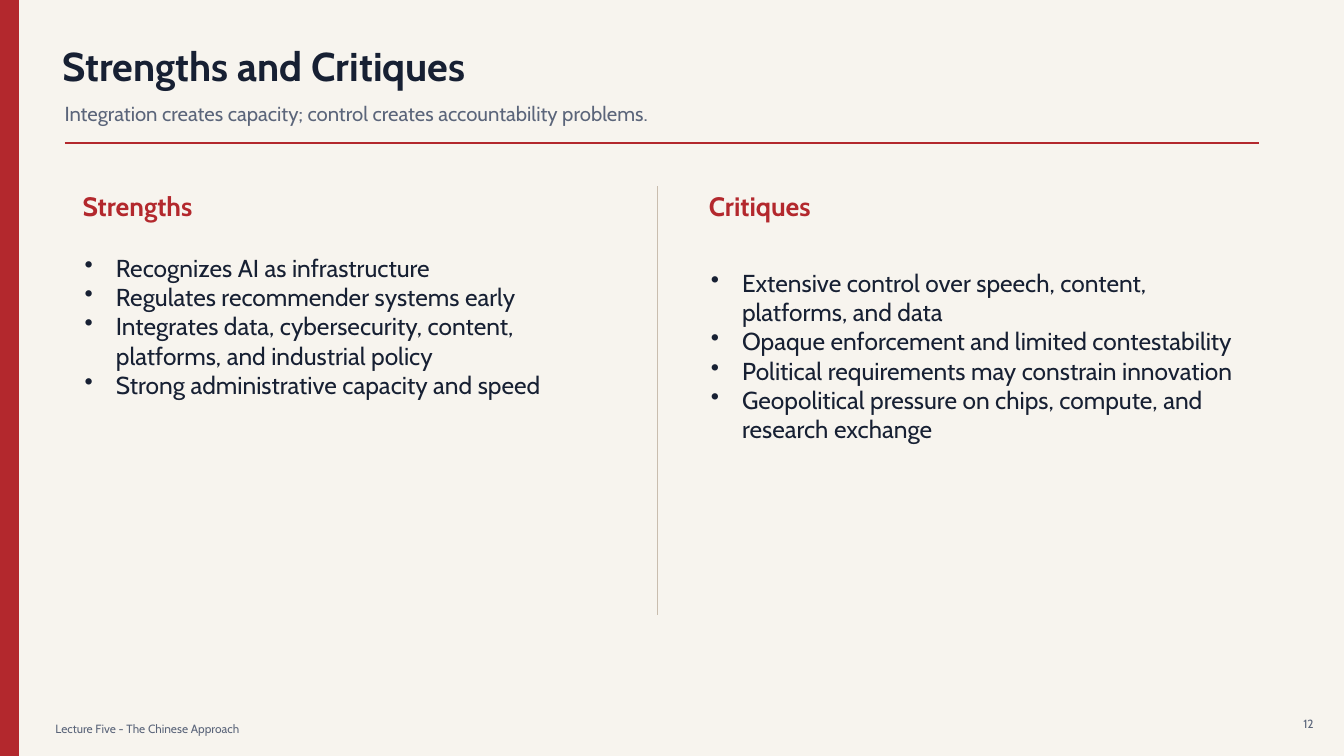
import pptx
import pptx.dml.color
import pptx.enum.shapes
import pptx.enum.text
import pptx.oxml
import pptx.oxml.ns
import pptx.util
from pptx.util import Inches

RED = pptx.dml.color.RGBColor(0xB3, 0x28, 0x2D)
NAVY = pptx.dml.color.RGBColor(0x17, 0x20, 0x33)
SLATE = pptx.dml.color.RGBColor(0x5B, 0x65, 0x7A)
SAND = pptx.dml.color.RGBColor(0xC9, 0xBD, 0xAE)
CREAM = pptx.dml.color.RGBColor(0xF7, 0xF4, 0xEE)
LEFT = pptx.enum.text.PP_ALIGN.LEFT
RIGHT = pptx.enum.text.PP_ALIGN.RIGHT

COLUMNS = [
    (0.82, "Strengths", 1.71, [
        "Recognizes AI as infrastructure",
        "Regulates recommender systems early",
        "Integrates data, cybersecurity, content, platforms, and industrial policy",
        "Strong administrative capacity and speed",
    ]),
    (7.03, "Critiques", 2.3, [
        "Extensive control over speech, content, platforms, and data",
        "Opaque enforcement and limited contestability",
        "Political requirements may constrain innovation",
        "Geopolitical pressure on chips, compute, and research exchange",
    ]),
]


class SlideBuilder:
    font_name = "Cabin"
    bullet_indent = Inches(0.31)

    def __init__(self, slide):
        self.slide = slide
        slide.background.fill.solid()
        slide.background.fill.fore_color.rgb = CREAM

    def bar(self, left, top, width, height, color):
        shape = self.slide.shapes.add_shape(
            pptx.enum.shapes.MSO_SHAPE.RECTANGLE,
            Inches(left), Inches(top), Inches(width), Inches(height))
        shape.shadow.inherit = False
        shape.fill.solid()
        shape.fill.fore_color.rgb = color
        shape.line.color.rgb = color
        shape.line.width = pptx.util.Pt(1)

    def line(self, start, end, color, width):
        connector = self.slide.shapes.add_connector(
            pptx.enum.shapes.MSO_CONNECTOR.STRAIGHT,
            *[Inches(value) for value in start + end])
        connector.line.color.rgb = color
        connector.line.width = pptx.util.Pt(width)
        connector._element.spPr.append(pptx.oxml.parse_xml(
            "<a:effectLst %s/>" % pptx.oxml.ns.nsdecls("a")))

    def title(self, box, text, size, color):
        self.fill_text(self.slide.shapes.title, box, [text], size, color, bold=True)

    def text(self, box, lines, size, color, **style):
        shape = self.slide.shapes.add_textbox(0, 0, 0, 0)
        self.fill_text(shape, box, lines, size, color, **style)

    def fill_text(self, shape, box, lines, size, color, bold=False, align=LEFT, bullets=False):
        for name, value in zip(("left", "top", "width", "height"), box):
            setattr(shape, name, Inches(value))
        frame = shape.text_frame
        frame_format = {
            "word_wrap": True,
            "auto_size": pptx.enum.text.MSO_AUTO_SIZE.NONE,
            "vertical_anchor": pptx.enum.text.MSO_ANCHOR.MIDDLE,
            "margin_left": 0, "margin_top": 0, "margin_right": 0, "margin_bottom": 0,
        }
        for name, value in frame_format.items():
            setattr(frame, name, value)
        frame.text = "\n".join(lines)
        font_format = {"name": self.font_name, "size": pptx.util.Pt(size), "bold": bold}
        for paragraph in frame.paragraphs:
            paragraph.alignment = align
            if bullets:
                self.bullet(paragraph)
            for run in paragraph.runs:
                for name, value in font_format.items():
                    setattr(run.font, name, value)
                run.font.color.rgb = color

    def bullet(self, paragraph):
        properties = paragraph._p.get_or_add_pPr()
        properties.set("marL", str(self.bullet_indent))
        properties.set("indent", str(-self.bullet_indent))
        properties.append(pptx.oxml.parse_xml(
            '<a:buChar %s char="•"/>' % pptx.oxml.ns.nsdecls("a")))

    def column(self, left, heading, list_height, items):
        self.text((left, 1.88, 5.35, 0.32), [heading], 19, RED, bold=True)
        self.text((left + 0.02, 2.38, 5.25, list_height), items, 17.5, NAVY, bullets=True)


def main():
    presentation = pptx.Presentation()
    presentation.slide_width = Inches(13.33)
    presentation.slide_height = Inches(7.5)
    builder = SlideBuilder(presentation.slides.add_slide(presentation.slide_layouts[5]))

    builder.bar(0, 0, 0.18, 7.5, RED)
    builder.text((0.55, 7.13, 9, 0.2), ["Lecture Five - The Chinese Approach"], 8.5, SLATE)
    builder.text((12.75, 7.08, 0.28, 0.2), ["12"], 8.5, SLATE, align=RIGHT)
    builder.title((0.62, 0.42, 9.8, 0.45), "Strengths and Critiques", 28.7, NAVY)
    builder.text((0.64, 0.95, 10.9, 0.35),
                 ["Integration creates capacity; control creates accountability problems."],
                 14.5, SLATE)
    builder.line((0.64, 1.42), (12.49, 1.42), RED, 1.25)
    builder.line((6.52, 1.85), (6.52, 6.1), SAND, 1)
    for column in COLUMNS:
        builder.column(*column)

    presentation.save("out.pptx")


if __name__ == "__main__":
    main()
